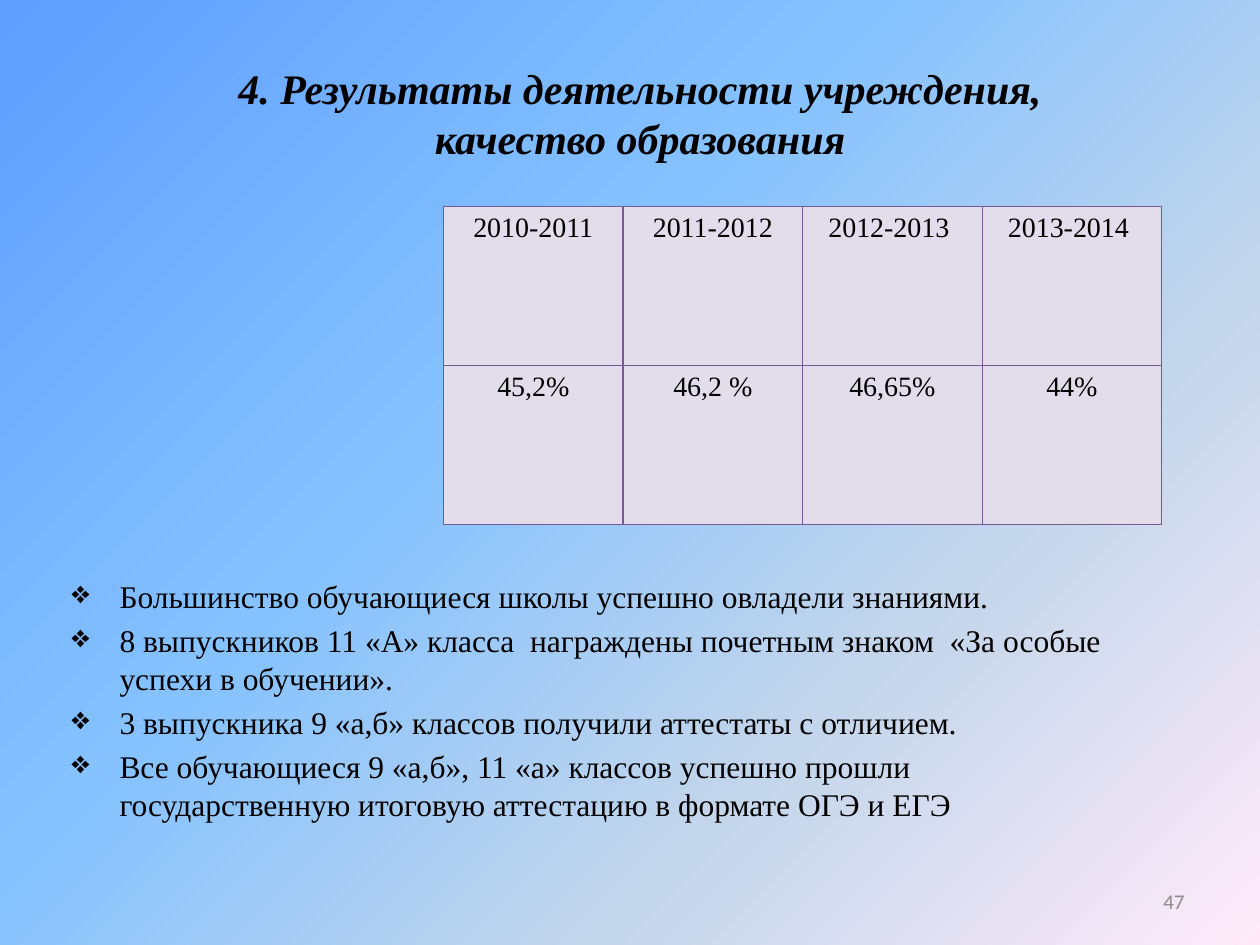
from lxml.etree import SubElement
from pptx import Presentation
from pptx.dml.color import RGBColor
from pptx.enum.text import MSO_ANCHOR, PP_ALIGN
from pptx.oxml import parse_xml
from pptx.oxml.ns import nsdecls, qn
from pptx.util import Inches, Pt

COLORS = {
    "text": "000000",
    "cell": "E2DCEB",
    "border": "745B93",
    "number": "8C8C8C",
}
BACKGROUND_STOPS = [(0, "5E9EFF"), (40, "85C2FF"), (70, "C4D6EB"), (100, "FFEBFA")]
SERIF = "Times New Roman"


def format_paragraph(paragraph, size, name=SERIF, color="text", alignment=None):
    paragraph.alignment = alignment
    paragraph.font.size = Pt(size)
    paragraph.font.name = name
    paragraph.font.color.rgb = RGBColor.from_string(COLORS[color])


def add_borders(cell):
    properties = cell._tc.get_or_add_tcPr()
    for index, side in enumerate(("lnL", "lnR", "lnT", "lnB")):
        properties.insert(index, parse_xml(
            f'<a:{side} {nsdecls("a")} w="{Pt(0.75)}"><a:solidFill>'
            f'<a:srgbClr val="{COLORS["border"]}"/></a:solidFill></a:{side}>'))


presentation = Presentation()
presentation.slide_width = Inches(10)
presentation.slide_height = Inches(7.5)
slide = presentation.slides.add_slide(presentation.slide_layouts[5])

# Diagonal gradient background
fill = slide.background.fill
fill.gradient()
fill.gradient_angle = 315
stop_list = slide.background._cSld.find(".//" + qn("a:gsLst"))
for stop in list(stop_list):
    stop_list.remove(stop)
for position, color in BACKGROUND_STOPS:
    stop = SubElement(stop_list, qn("a:gs"), pos=str(position * 1000))
    SubElement(stop, qn("a:srgbClr"), val=color)

# Title
title = slide.shapes.title
title.left, title.top = Inches(1.33), Inches(0.23)
title.width, title.height = Inches(7.5), Inches(1.33)
title.text_frame.text = "4. Результаты деятельности учреждения, качество образования"
title.text_frame.vertical_anchor = MSO_ANCHOR.MIDDLE
paragraph = title.text_frame.paragraphs[0]
format_paragraph(paragraph, 24, alignment=PP_ALIGN.CENTER)
paragraph.font.bold = True
paragraph.font.italic = True

# Bulleted results
results = [
    "Большинство обучающиеся школы успешно овладели знаниями.",
    "8 выпускников 11 «А» класса  награждены почетным знаком  «За особые успехи в обучении».",
    "3 выпускника 9 «а,б» классов получили аттестаты с отличием.",
    "Все обучающиеся 9 «а,б», 11 «а» классов успешно прошли "
    "государственную итоговую аттестацию в формате ОГЭ и ЕГЭ",
]
results_box = slide.shapes.add_textbox(Inches(0.47), Inches(4.53), Inches(8.59), Inches(2.64))
text_frame = results_box.text_frame
text_frame.word_wrap = True
for index, result in enumerate(results):
    paragraph = text_frame.add_paragraph() if index else text_frame.paragraphs[0]
    paragraph.text = result
    format_paragraph(paragraph, 18)
    paragraph.space_before = Pt(3.6)
    properties = paragraph._p.get_or_add_pPr()
    properties.set("marL", str(Inches(0.38)))
    properties.set("indent", str(Inches(-0.38)))
    bullet = parse_xml(f'<a:buChar {nsdecls("a")} char="❖"/>')
    properties.find(qn("a:defRPr")).addprevious(bullet)

# Quality by school year
quality = [
    ["2010-2011", "2011-2012", "2012-2013 ", "2013-2014 "],
    ["45,2%", "46,2 %", "46,65%", "44%"],
]
table = slide.shapes.add_table(
    2, 4, Inches(3.52), Inches(1.64), Inches(5.7), Inches(2.52)).table
for row_index, row in enumerate(quality):
    for column_index, value in enumerate(row):
        cell = table.cell(row_index, column_index)
        cell.text = value
        format_paragraph(cell.text_frame.paragraphs[0], 16, alignment=PP_ALIGN.CENTER)
        cell.text_frame.paragraphs[0].font.bold = False
        cell.fill.solid()
        cell.fill.fore_color.rgb = RGBColor.from_string(COLORS["cell"])
        add_borders(cell)

# Slide number
number_box = slide.shapes.add_textbox(Inches(7.17), Inches(6.95), Inches(2.33), Inches(0.4))
number_box.text_frame.word_wrap = True
number_box.text_frame.vertical_anchor = MSO_ANCHOR.MIDDLE
paragraph = number_box.text_frame.paragraphs[0]
paragraph.text = "47"
format_paragraph(paragraph, 12, "Calibri", "number", PP_ALIGN.RIGHT)

presentation.save("out.pptx")
